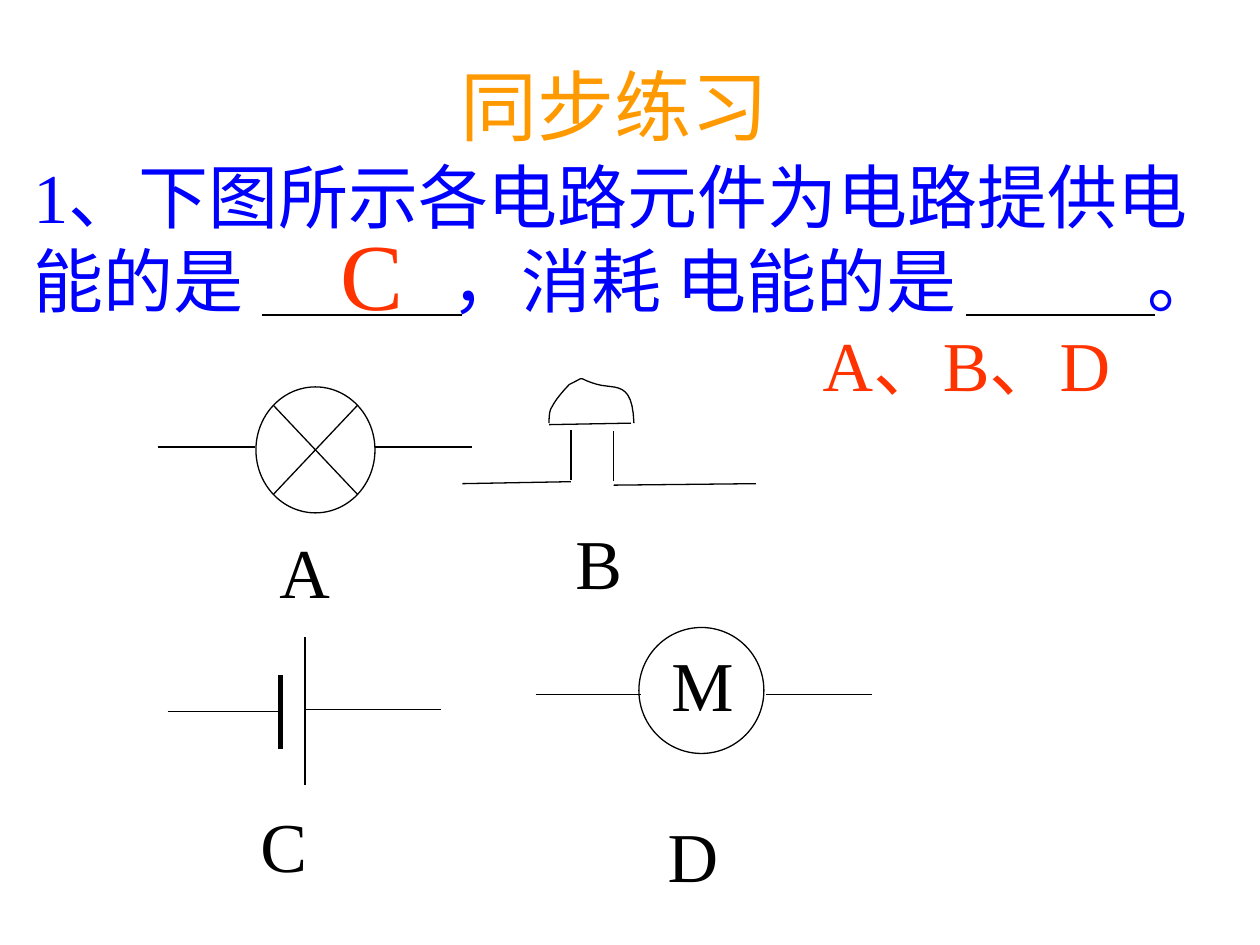
from dataclasses import dataclass

from lxml.etree import SubElement
from pptx import Presentation
from pptx.dml.color import RGBColor
from pptx.enum.shapes import MSO_CONNECTOR, MSO_SHAPE
from pptx.enum.text import MSO_ANCHOR, MSO_AUTO_SIZE, PP_ALIGN
from pptx.oxml.ns import qn
from pptx.util import Cm, Pt


@dataclass(frozen=True)
class Theme:
    font: str = "Times New Roman"
    ink: RGBColor = RGBColor(0, 0, 0)
    paper: RGBColor = RGBColor(255, 255, 255)
    heading: RGBColor = RGBColor(255, 153, 0)
    question: RGBColor = RGBColor(0, 0, 255)
    answer: RGBColor = RGBColor(255, 51, 0)
    title_size: int = 44
    text_size: int = 40
    answer_size: int = 54
    thin: float = 0.75
    thick: float = 3


def write_text(frame, *pieces, font, size, color, align=PP_ALIGN.CENTER, blanks=()):
    frame.word_wrap = True
    frame.auto_size = MSO_AUTO_SIZE.SHAPE_TO_FIT_TEXT
    frame.vertical_anchor = MSO_ANCHOR.TOP
    para = frame.paragraphs[0]
    properties = para._p.get_or_add_pPr()
    properties.set("marL", "0")
    properties.set("indent", "0")
    SubElement(properties, qn("a:buNone"))
    para.alignment = align
    para.space_before = Pt(0)
    spans = [(pieces[0], 0)]
    for blank, piece in zip(blanks, pieces[1:]):
        spans += [(" ", blank), (piece, 0)]
    for text, spacing in spans:
        span = para.add_run()
        span.text = text
        span.font.name = font
        span.font.size = Pt(size)
        span.font.color.rgb = color
        if spacing:
            span._r.get_or_add_rPr().set("spc", str(spacing * 100))


def curve_points(start, curves, steps=12):
    points = [start]
    for first, second, end in curves:
        origin = points[-1]
        for step in range(1, steps + 1):
            t = step / steps
            weights = ((1 - t) ** 3, 3 * t * (1 - t) ** 2, 3 * t**2 * (1 - t), t**3)
            corners = (origin, first, second, end)
            points.append(tuple(
                sum(weight * corner[axis] for weight, corner in zip(weights, corners))
                for axis in (0, 1)
            ))
    return points


class SlideBuilder:
    def __init__(self, page, theme):
        self.page = page
        self.theme = theme
        self.shapes = page.shapes

    def start_group(self):
        self.shapes = self.page.shapes.add_group_shape().shapes

    def end_group(self):
        self.shapes = self.page.shapes

    def placeholder(self, index, pieces, left, top, width, height, **style):
        box = self.page.placeholders[index]
        box.left, box.top, box.width, box.height = map(Cm, (left, top, width, height))
        write_text(box.text_frame, *pieces, font=self.theme.font, **style)

    def label(self, text, left, top, width=1.7, height=1.96, size=None, color=None):
        box = self.shapes.add_textbox(*map(Cm, (left, top, width, height)))
        write_text(
            box.text_frame, text, font=self.theme.font,
            size=size or self.theme.text_size, color=color or self.theme.ink,
        )

    def outline(self, shape):
        shape.shadow.inherit = False
        shape.line.color.rgb = self.theme.ink
        shape.line.width = Pt(self.theme.thin)

    def symbol(self, kind, left, top, width, height):
        shape = self.shapes.add_shape(kind, *map(Cm, (left, top, width, height)))
        shape.fill.solid()
        shape.fill.fore_color.rgb = self.theme.paper
        self.outline(shape)

    def wire(self, *ends, width=None):
        line = self.shapes.add_connector(MSO_CONNECTOR.STRAIGHT, *map(Cm, ends))
        line.line.color.rgb = self.theme.ink
        line.line.width = Pt(width or self.theme.thin)
        SubElement(line._element.spPr, qn("a:effectLst"))

    def curve(self, start, curves):
        points = [tuple(map(Cm, point)) for point in curve_points(start, curves)]
        builder = self.shapes.build_freeform(*points[0])
        builder.add_line_segments(points[1:], close=False)
        shape = builder.convert_to_shape()
        shape.fill.background()
        self.outline(shape)


def draw_lamp(slide):
    slide.start_group()
    slide.symbol(MSO_SHAPE.FLOWCHART_SUMMING_JUNCTION, 5.16, 7.8, 2.4, 2.54)
    for left, right in ((3.18, 5.14), (7.56, 9.52)):
        slide.wire(left, 9.01, right, 9.01)
    slide.end_group()


def draw_bell(slide):
    slide.start_group()
    slide.wire(9.32, 9.75, 11.51, 9.71)
    slide.wire(12.37, 9.78, 15.24, 9.75)
    slide.wire(11.51, 9.68, 11.51, 8.66)
    slide.wire(12.37, 9.7, 12.37, 8.69)
    slide.wire(11.07, 8.56, 12.72, 8.53)
    slide.curve((11.07, 8.53), (
        ((11.07, 8.43), (11.07, 8.28), (11.13, 8.2)),
        ((11.23, 8), (11.48, 7.75), (11.48, 7.75)),
        ((11.86, 7.57), (11.58, 7.62), (12.04, 7.75)),
        ((12.42, 7.85), (12.75, 7.67), (12.78, 8.53)),
    ))
    slide.end_group()


def draw_motor(slide):
    slide.start_group()
    slide.symbol(MSO_SHAPE.OVAL, 12.88, 12.65, 2.52, 2.54)
    slide.label("M", 12.9, 12.8, width=2.52)
    for left, right in ((10.8, 12.93), (15.44, 17.57)):
        slide.wire(left, 14, right, 14)
    slide.end_group()


def draw_cell(slide):
    slide.start_group()
    slide.wire(5.65, 13.61, 5.65, 15.09, width=slide.theme.thick)
    slide.wire(6.15, 12.85, 6.15, 15.82)
    slide.wire(3.38, 14.35, 5.65, 14.35)
    slide.wire(6.17, 14.3, 8.89, 14.3)
    slide.end_group()


def main():
    deck = Presentation()
    deck.slide_width, deck.slide_height = Cm(25.4), Cm(19.05)
    theme = Theme()
    slide = SlideBuilder(deck.slides.add_slide(deck.slide_layouts[1]), theme)

    slide.placeholder(
        0, ("同步练习",), 4.87, 1.06, 15.03, 2.12,
        size=theme.title_size, color=theme.heading,
    )
    slide.placeholder(
        1, ("1、下图所示各电路元件为电路提供电能的是", "，消耗 电能的是", "。"),
        0.42, 2.96, 24.98, 3.63, size=theme.text_size, color=theme.question,
        align=PP_ALIGN.LEFT, blanks=(110, 100),
    )
    for left, right in ((5.29, 9.31), (19.47, 23.28)):
        slide.wire(left, 6.35, right, 6.35)

    for draw in (draw_lamp, draw_bell, draw_motor, draw_cell):
        draw(slide)
    for name, left, top in (
        ("A", 5.29, 10.54), ("B", 11.22, 10.34), ("C", 4.87, 16.06), ("D", 13.12, 16.26),
    ):
        slide.label(name, left, top)

    slide.label("C", 6.56, 4.23, 1.9, 2.54, size=theme.answer_size, color=theme.answer)
    slide.label("A、B、D", 15.88, 6.35, 7.2, color=theme.answer)
    deck.save("out.pptx")


if __name__ == "__main__":
    main()
